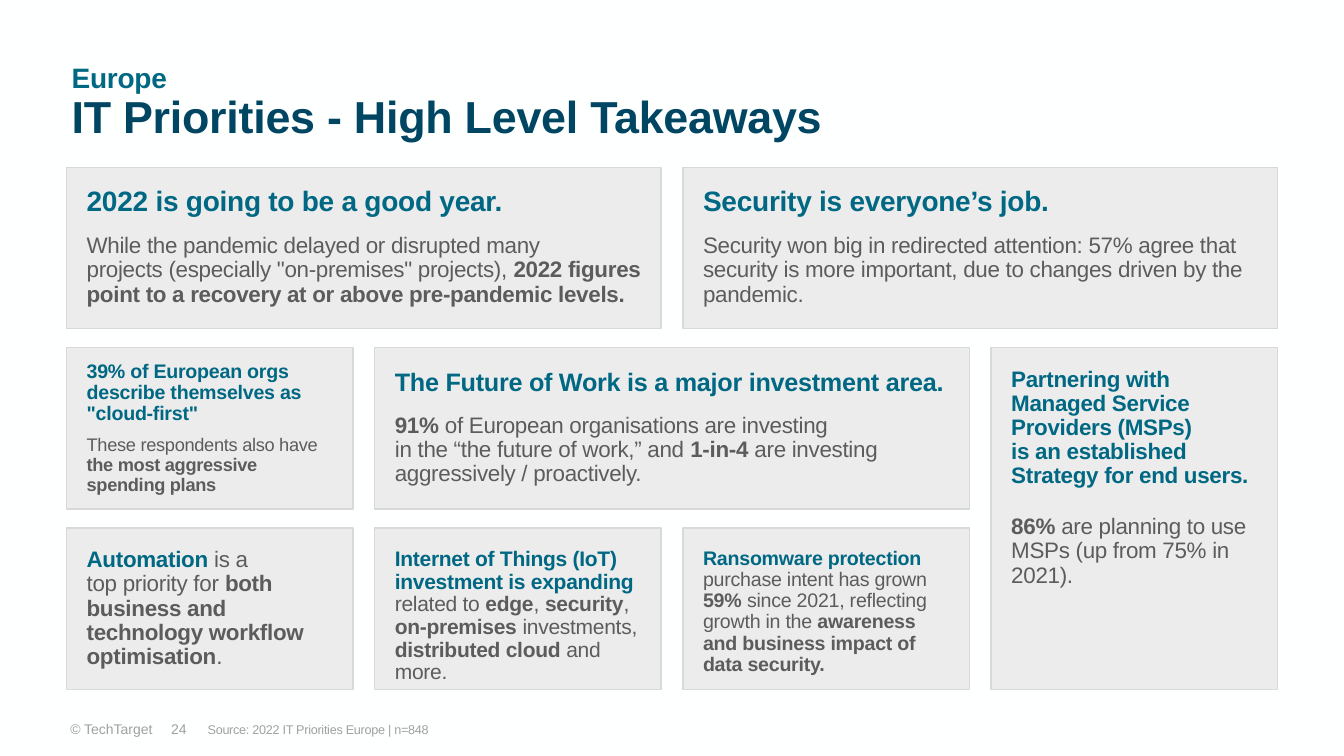
from dataclasses import dataclass

from pptx import Presentation
from pptx.dml.color import RGBColor
from pptx.enum.shapes import MSO_SHAPE
from pptx.enum.text import MSO_ANCHOR, MSO_AUTO_SIZE, PP_ALIGN
from pptx.util import Inches, Pt


@dataclass(frozen=True)
class Theme:
    font: str = "Arial"
    background: str = "FEFFFF"
    title: str = "004562"
    accent: str = "006883"
    body: str = "5C5C5C"
    muted: str = "A0A0A0"
    card: str = "ECECEC"
    border: str = "D9D9D9"
    title_size: int = 32
    region_size: int = 20
    footer_size: int = 10
    source_size: int = 9
    line_spacing: float = 0.9
    tracking: str = "-20"


THEME = Theme()
LEFT, TOP, WIDTH = 0.66, 1.66, 12.01
CARD_WIDTH, CARD_HEIGHT = 2.84, 1.6
COLUMN_GAP = (WIDTH - 4 * CARD_WIDTH) / 3
ROW_GAP = 0.19
MIDDLE, UPPER = MSO_ANCHOR.MIDDLE, MSO_ANCHOR.TOP

HEAD, BOLD, PLAIN = (THEME.accent, True), (THEME.body, True), (THEME.body, False)

CARDS = [
    ((0, 0, 2, 1), UPPER, [
        (20, 0, 12, [("2022 is going to be a good year.", HEAD)]),
        (16, 0, 0, [
            ("While the pandemic delayed or disrupted many\n"
             "projects (especially \"on-premises\" projects), ", PLAIN),
            ("2022 figures point to a recovery at or above pre-pandemic levels.", BOLD)]),
    ]),
    ((2, 0, 2, 1), UPPER, [
        (20, 0, 12, [("Security is everyone’s job.", HEAD)]),
        (16, 0, 0, [
            ("Security won big in redirected attention: 57% agree that security is more "
             "important, due to changes driven by the pandemic.", PLAIN)]),
    ]),
    ((0, 1, 1, 1), MIDDLE, [
        (14, 0, 8, [("39% of European orgs describe themselves as \"cloud-first\"", HEAD)]),
        (13, 0, 0, [
            ("These respondents also have ", PLAIN),
            ("the most aggressive spending plans", BOLD)]),
    ]),
    ((1, 1, 2, 1), MIDDLE, [
        (18, 0, 12, [("The Future of Work is a major investment area.", HEAD)]),
        (16, 0, 0, [
            ("91% ", BOLD),
            ("of European organisations are investing\nin the “the future of work,” and ", PLAIN),
            ("1-in-4", BOLD),
            (" are investing aggressively / proactively.", PLAIN)]),
    ]),
    ((3, 1, 1, 2), UPPER, [
        (16, 0, 0, [("Partnering with Managed Service Providers (MSPs)\nis an established", HEAD)]),
        (16, 0, 0, [("Strategy for end users.", HEAD)]),
        (16, 19, 0, [
            ("86% ", BOLD),
            ("are planning to use MSPs (up from 75% in 2021).", PLAIN)]),
    ]),
    ((0, 2, 1, 1), MIDDLE, [
        (16, 0, 0, [
            ("Automation", HEAD),
            (" is a\ntop priority for ", PLAIN),
            ("both business and technology workflow optimisation", BOLD),
            (".", PLAIN)]),
    ]),
    ((1, 2, 1, 1), UPPER, [
        (15, 0, 0, [
            ("Internet of Things (IoT) investment is expanding ", HEAD),
            ("related to ", PLAIN),
            ("edge", BOLD),
            (", ", PLAIN),
            ("security", BOLD),
            (",\n", PLAIN),
            ("on-premises", BOLD),
            (" investments, ", PLAIN),
            ("distributed cloud ", BOLD),
            ("and more.", PLAIN)]),
    ]),
    ((2, 2, 1, 1), UPPER, [
        (14, 0, 0, [
            ("Ransomware protection ", HEAD),
            ("purchase intent has grown ", PLAIN),
            ("59% ", BOLD),
            ("since 2021, reflecting growth in the ", PLAIN),
            ("awareness and business impact of data security.", BOLD)]),
    ]),
]


def rgb(value):
    return RGBColor.from_string(value)


def set_frame(frame, inset, right_inset, anchor=UPPER):
    frame.word_wrap = True
    frame.auto_size = MSO_AUTO_SIZE.NONE
    frame.vertical_anchor = anchor
    frame.margin_left = frame.margin_top = frame.margin_bottom = Inches(inset)
    frame.margin_right = Inches(right_inset)


def add_run(paragraph, text, size, style, tracking=THEME.tracking):
    color, bold = style
    for index, line in enumerate(text.split("\n")):
        if index:
            paragraph.add_line_break()
        if line:
            run = paragraph.add_run()
            run.text = line
            run.font.name = THEME.font
            run.font.size = Pt(size)
            run.font.bold = bold
            run.font.color.rgb = rgb(color)
            if tracking:
                run._r.get_or_add_rPr().set("spc", tracking)


def add_title(slide, left, top, width, height):
    title = slide.shapes.title
    title.left, title.top = Inches(left), Inches(top)
    title.width, title.height = Inches(width), Inches(height)
    set_frame(title.text_frame, 0.05, 0.05, MIDDLE)
    heading = title.text_frame.paragraphs[0]
    heading.alignment = PP_ALIGN.LEFT
    heading.line_spacing = THEME.line_spacing
    add_run(heading, "Europe\n", THEME.region_size, HEAD)
    add_run(heading, "IT Priorities - High Level Takeaways", THEME.title_size, (THEME.title, True))


def add_card(slide, left, top, width, height, anchor, paragraphs):
    card = slide.shapes.add_shape(
        MSO_SHAPE.RECTANGLE, Inches(left), Inches(top), Inches(width), Inches(height))
    card.shadow.inherit = False
    card.fill.solid()
    card.fill.fore_color.rgb = rgb(THEME.card)
    card.line.color.rgb = rgb(THEME.border)
    card.line.width = Pt(1)
    frame = card.text_frame
    set_frame(frame, 0.2, 0.17, anchor)
    for index, (size, before, after, runs) in enumerate(paragraphs):
        paragraph = frame.add_paragraph() if index else frame.paragraphs[0]
        paragraph.alignment = PP_ALIGN.LEFT
        paragraph.line_spacing = THEME.line_spacing
        paragraph.space_before, paragraph.space_after = Pt(before), Pt(after)
        for text, style in runs:
            add_run(paragraph, text, size, style)


def add_card_grid(slide, left, top):
    for (column, row, columns, rows), anchor, paragraphs in CARDS:
        add_card(
            slide,
            left + column * (CARD_WIDTH + COLUMN_GAP),
            top + row * (CARD_HEIGHT + ROW_GAP),
            columns * (CARD_WIDTH + COLUMN_GAP) - COLUMN_GAP,
            rows * (CARD_HEIGHT + ROW_GAP) - ROW_GAP,
            anchor, paragraphs)


def add_footer(slide, left, top):
    parts = [
        ("© TechTarget", 0, 1.14, 0.1, THEME.footer_size, PP_ALIGN.RIGHT, None),
        ("24", 1.13, 0.58, 0.1, THEME.footer_size, PP_ALIGN.LEFT, None),
        ("Source: 2022 IT Priorities Europe | n=848", 1.54, 10.66, 0.05,
         THEME.source_size, PP_ALIGN.LEFT, THEME.tracking),
    ]
    for text, offset, width, side_inset, size, alignment, tracking in parts:
        box = slide.shapes.add_textbox(
            Inches(left + offset), Inches(top), Inches(width), Inches(0.27))
        set_frame(box.text_frame, side_inset, side_inset, MIDDLE)
        box.text_frame.margin_top = box.text_frame.margin_bottom = Inches(0.05)
        paragraph = box.text_frame.paragraphs[0]
        paragraph.alignment = alignment
        add_run(paragraph, text, size, (THEME.muted, False), tracking)


def main():
    deck = Presentation()
    deck.slide_width, deck.slide_height = Inches(13.33), Inches(7.5)
    slide = deck.slides.add_slide(deck.slide_layouts[5])
    slide.background.fill.solid()
    slide.background.fill.fore_color.rgb = rgb(THEME.background)
    add_title(slide, LEFT, 0.53, WIDTH, 1)
    add_card_grid(slide, LEFT, TOP)
    add_footer(slide, 0.47, 7.1)
    deck.save("out.pptx")


if __name__ == "__main__":
    main()
